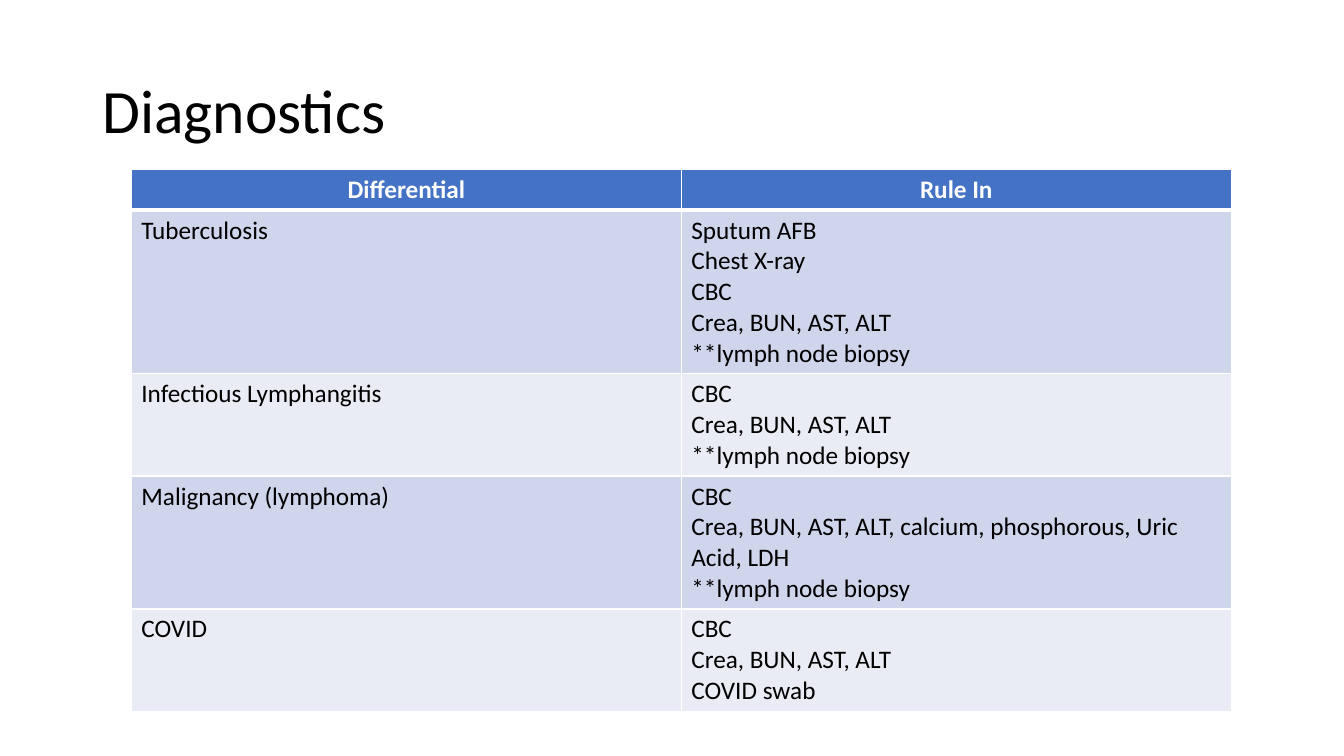
import pptx
import pptx.dml.color
import pptx.enum.text
import pptx.util
from lxml import etree
from pptx.oxml.ns import qn

Cm = pptx.util.Cm
Pt = pptx.util.Pt
PP_ALIGN = pptx.enum.text.PP_ALIGN

BODY = {"name": "Calibri", "size": Pt(18), "bold": False}
HEAD = {**BODY, "bold": True}
TITLE = {**BODY, "size": Pt(44)}

HEADINGS = ("Differential", "Rule In")
BIOPSY = "**lymph node biopsy"
CHEMISTRY = "Crea, BUN, AST, ALT"
DIFFERENTIALS = [
    ("Tuberculosis", ["Sputum AFB", "Chest X-ray", "CBC", CHEMISTRY, BIOPSY], 5),
    ("Infectious Lymphangitis", ["CBC", CHEMISTRY, BIOPSY], 3),
    ("Malignancy (lymphoma)",
     ["CBC", CHEMISTRY + ", calcium, phosphorous, Uric Acid, LDH", BIOPSY], 4),
    ("COVID", ["CBC", CHEMISTRY, "COVID swab"], 3),
]


def rgb(value):
    return pptx.dml.color.RGBColor.from_string(value)


def write(tf, lines, font, color, align=PP_ALIGN.LEFT, spacing=1.0):
    for i, line in enumerate(lines):
        p = tf.paragraphs[0] if i == 0 else tf.add_paragraph()
        p.alignment = align
        p.line_spacing = spacing
        r = p.add_run()
        r.text = line
        for key, value in font.items():
            setattr(r.font, key, value)
        r.font.color.rgb = rgb(color)


def set_borders(cell, widths, color):
    tc_pr = cell._tc.get_or_add_tcPr()
    for side, width in zip("LRTB", widths):
        ln = etree.SubElement(tc_pr, qn(f"a:ln{side}"), w=str(Pt(width)))
        fill = etree.SubElement(ln, qn("a:solidFill"))
        etree.SubElement(fill, qn("a:srgbClr"), val=color)


def add_title(s, text, left, top, width, height):
    tf = s.shapes.add_textbox(left, top, width, height).text_frame
    tf.word_wrap = True
    tf.vertical_anchor = pptx.enum.text.MSO_ANCHOR.MIDDLE
    write(tf, [text], TITLE, "000000", spacing=0.9)


def add_diagnostics_table(s, left, top, width):
    rows = [([h] for h in HEADINGS)]
    rows += [([name], tests) for name, tests, _ in DIFFERENTIALS]
    line_counts = [1] + [count for _, _, count in DIFFERENTIALS]
    heights = [Cm(0.25 + 0.775 * count) for count in line_counts]
    table = s.shapes.add_table(len(rows), len(HEADINGS), left, top, width, sum(heights)).table
    for i, (row, height) in enumerate(zip(rows, heights)):
        table.rows[i].height = height
        is_head = i == 0
        fill = "4472C4" if is_head else ("E9EBF5", "CFD5EA")[i % 2]
        widths = (1, 1, 3 if i == 1 else 1, 3 if is_head else 1)
        for j, lines in enumerate(row):
            cell = table.cell(i, j)
            set_borders(cell, widths, "FFFFFF")
            cell.fill.solid()
            cell.fill.fore_color.rgb = rgb(fill)
            if is_head:
                write(cell.text_frame, lines, HEAD, "FFFFFF", PP_ALIGN.CENTER)
            else:
                write(cell.text_frame, lines, BODY, "000000")


def main():
    prs = pptx.Presentation()
    prs.slide_width, prs.slide_height = Cm(33.87), Cm(19.05)
    s = prs.slides.add_slide(prs.slide_layouts[6])
    add_title(s, "Diagnostics", Cm(2.33), Cm(1.01), Cm(29.21), Cm(3.68))
    add_diagnostics_table(s, Cm(3.31), Cm(4.27), Cm(27.72))
    prs.save("out.pptx")


if __name__ == "__main__":
    main()
